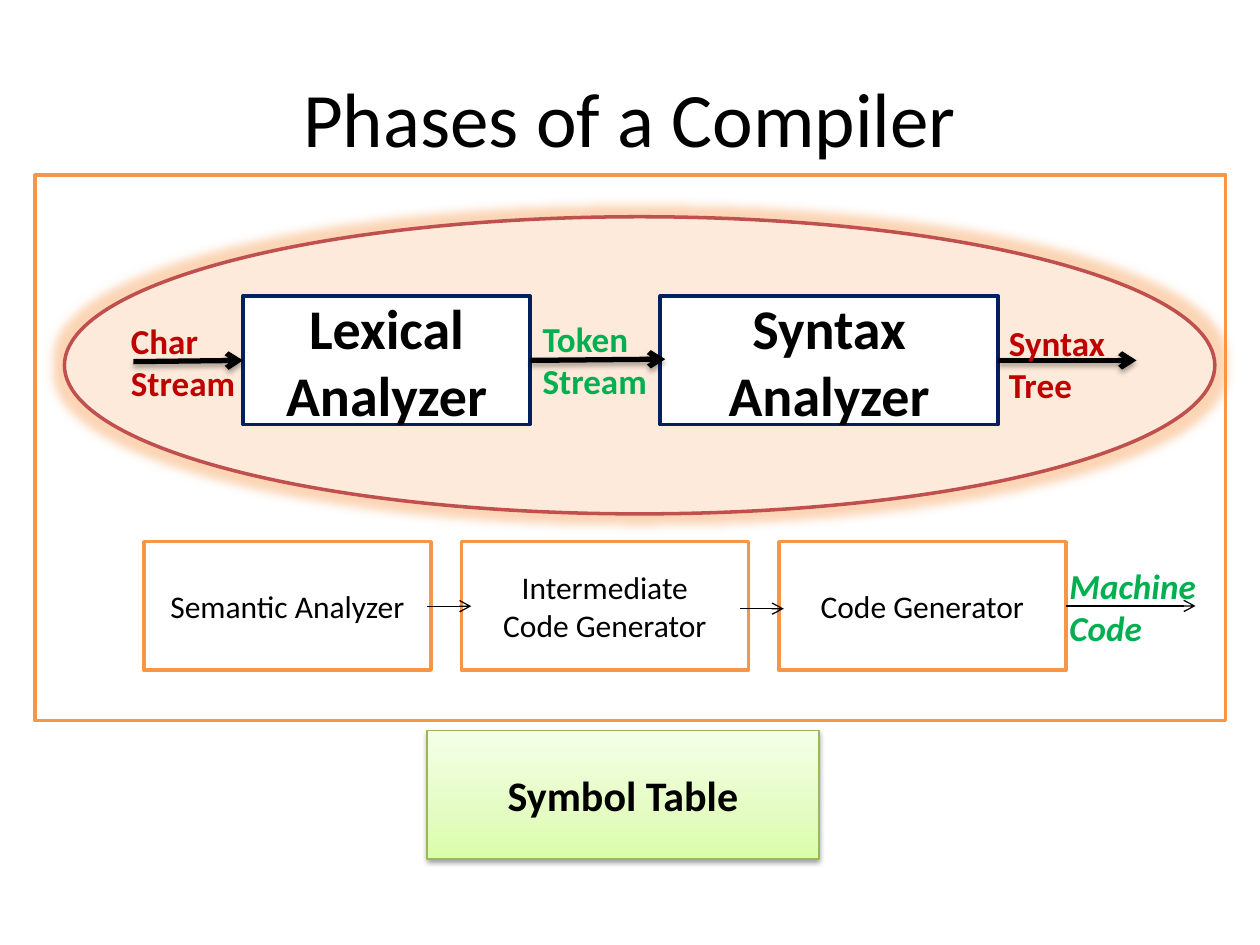
from lxml import etree
from pptx import Presentation
from pptx.dml.color import RGBColor
from pptx.enum.shapes import MSO_CONNECTOR, MSO_SHAPE
from pptx.enum.text import MSO_ANCHOR, PP_ALIGN
from pptx.oxml import parse_xml
from pptx.oxml.ns import qn
from pptx.util import Cm, Pt

RECT, OVAL = MSO_SHAPE.RECTANGLE, MSO_SHAPE.OVAL
LINE = MSO_CONNECTOR.STRAIGHT
MID = MSO_ANCHOR.MIDDLE
LEFT, CENTER = PP_ALIGN.LEFT, PP_ALIGN.CENTER
NS = 'xmlns:a="http://schemas.openxmlformats.org/drawingml/2006/main"'
BLACK, WHITE, ORANGE, NAVY = "000000", "FFFFFF", "F79646", "002060"
RED, GREEN = "C00000", "00B050"

# Content: places are left, top, width, height in cm
TITLE = "Phases of a Compiler"
FRAME = (0.71, 3.53, 24, 11)
FOCUS = (1.3, 4.37, 23.19, 5.99)
FRONT = [("Lexical Analyzer", 4.9, 5.79), ("Syntax Analyzer", 13.31, 6.81)]
BACK = ["Semantic Analyzer", "Intermediate\nCode Generator", "Code Generator"]
TABLE = ("Symbol Table", (8.61, 14.73, 7.9, 2.59))
LABELS = [
    ("Char\nStream", (2.39, 6.32, 2.69, 1.96), RED, False),
    ("Token\nStream", (10.69, 6.27, 2.69, 1.96), GREEN, False),
    ("Syntax Tree", (20.09, 6.35, 2.79, 1.96), RED, False),
    ("Machine\nCode", (21.31, 11.25, 3.4, 1.96), GREEN, True),
]
STOPS = [(0, "DAFDA7"), (35, "E4FCC2"), (100, "F5FFE7")]
HIGH, FRONT_TOP, BACK_TOP = 2.59, 5.97, 10.92
BACK_LEFT, BACK_WIDE, STEP = 2.9, 5.79, 6.4

prs = Presentation()
prs.slide_width, prs.slide_height = Cm(25.4), Cm(19.05)
slide = prs.slides.add_slide(prs.slide_layouts[5])
shapes = slide.shapes


def paint(fmt, color):
    if hasattr(fmt, "solid"):
        fmt.solid()
        fmt.fore_color.rgb = RGBColor.from_string(color)
    else:
        fmt.color.rgb = RGBColor.from_string(color)


def write(shape, text, size=18, color=BLACK, bold=False, italic=False,
          align=CENTER, anchor=MID):
    frame = shape.text_frame
    frame.word_wrap = True
    frame.vertical_anchor = anchor
    frame.text = text
    for par in frame.paragraphs:
        par.alignment = align
        font = par.runs[0].font
        font.name, font.size = "Calibri", Pt(size)
        font.bold, font.italic = bold, italic
        paint(font, color)


def box(place, fill, line, width=2, kind=RECT):
    shape = shapes.add_shape(kind, *map(Cm, place))
    shape.shadow.inherit = False
    paint(shape.fill, fill)
    paint(shape.line, line)
    shape.line.width = Pt(width)
    return shape


def tint(color, alpha):
    return f'<a:srgbClr val="{color}"><a:alpha val="{alpha * 1000}"/></a:srgbClr>'


def effect(shape, inner=""):
    props = shape._element.spPr
    old = props.find(qn("a:effectLst"))
    if old is not None:
        props.remove(old)
    props.append(parse_xml(f"<a:effectLst {NS}>{inner}</a:effectLst>"))


def shade(alpha, blur, dist):
    return (f'<a:outerShdw blurRad="{Pt(blur)}" dist="{Pt(dist)}" dir="5400000" '
            f'rotWithShape="0">{tint(BLACK, alpha)}</a:outerShdw>')


def arrow(start, end, heavy=False):
    """Each end is a point in cm, or a pair of box and side."""
    spots = [(0, 0) if hasattr(p[0], "shape_id") else p for p in (start, end)]
    conn = shapes.add_connector(LINE, *(Cm(v) for p in spots for v in p))
    if hasattr(start[0], "shape_id"):
        conn.begin_connect(*start)
    if hasattr(end[0], "shape_id"):
        conn.end_connect(*end)
    paint(conn.line, BLACK)
    conn.line.width = Pt(3 if heavy else 0.75)
    etree.SubElement(conn.line._get_or_add_ln(), qn("a:tailEnd"), type="arrow")
    effect(conn, shade(35, 3.1, 1.8) if heavy else "")


# Frame, highlighted area and title
box(FRAME, WHITE, ORANGE)
focus = box(FOCUS, "FDEADA", "C0504D", kind=OVAL)
effect(focus, f'<a:glow rad="{Pt(11)}">{tint(ORANGE, 40)}</a:glow>')
title = shapes.title
title.left, title.top, title.width, title.height = map(Cm, (1.27, 0.76, 22.86, 3.18))
write(title, TITLE, size=44)

# Front phases
front = []
for text, left, wide in FRONT:
    front.append(box((left, FRONT_TOP, wide, HIGH), WHITE, NAVY))
    write(front[-1], text, size=32, bold=True)
lexer, syntax = front

# Back phases
back = []
for i, text in enumerate(BACK):
    place = (BACK_LEFT + i * STEP, BACK_TOP, BACK_WIDE, HIGH)
    back.append(box(place, WHITE, ORANGE))
    write(back[-1], text)

# Symbol table
text, place = TABLE
table = box(place, WHITE, "98B955", 0.75)
stops = "".join(f'<a:gs pos="{pos * 1000}"><a:srgbClr val="{color}"/></a:gs>'
                for pos, color in STOPS)
props = table._element.spPr
props.replace(props.find(qn("a:solidFill")), parse_xml(
    f'<a:gradFill {NS} rotWithShape="1"><a:gsLst>{stops}</a:gsLst>'
    '<a:lin ang="16200000" scaled="1"/></a:gradFill>'))
effect(table, shade(38, 3.1, 1.6))
write(table, text, size=24, bold=True)

# Arrows
front_mid, back_mid = FRONT_TOP + HIGH / 2, BACK_TOP + HIGH / 2
arrow((2.69, 7.29), (lexer, 1), heavy=True)
arrow((lexer, 3), (13.41, 7.24), heavy=True)
arrow((syntax, 3), (22.91, front_mid), heavy=True)
arrow((8.61, 12.22), (9.5, 12.22))
arrow((14.91, 12.27), (15.8, 12.27))
arrow((back[-1], 3), (24.1, back_mid))

# Data passed between phases
for text, place, color, italic in LABELS:
    label = shapes.add_textbox(*map(Cm, place))
    write(label, text, size=20, color=color, bold=True, italic=italic,
          align=LEFT, anchor=MSO_ANCHOR.TOP)

prs.save("out.pptx")
